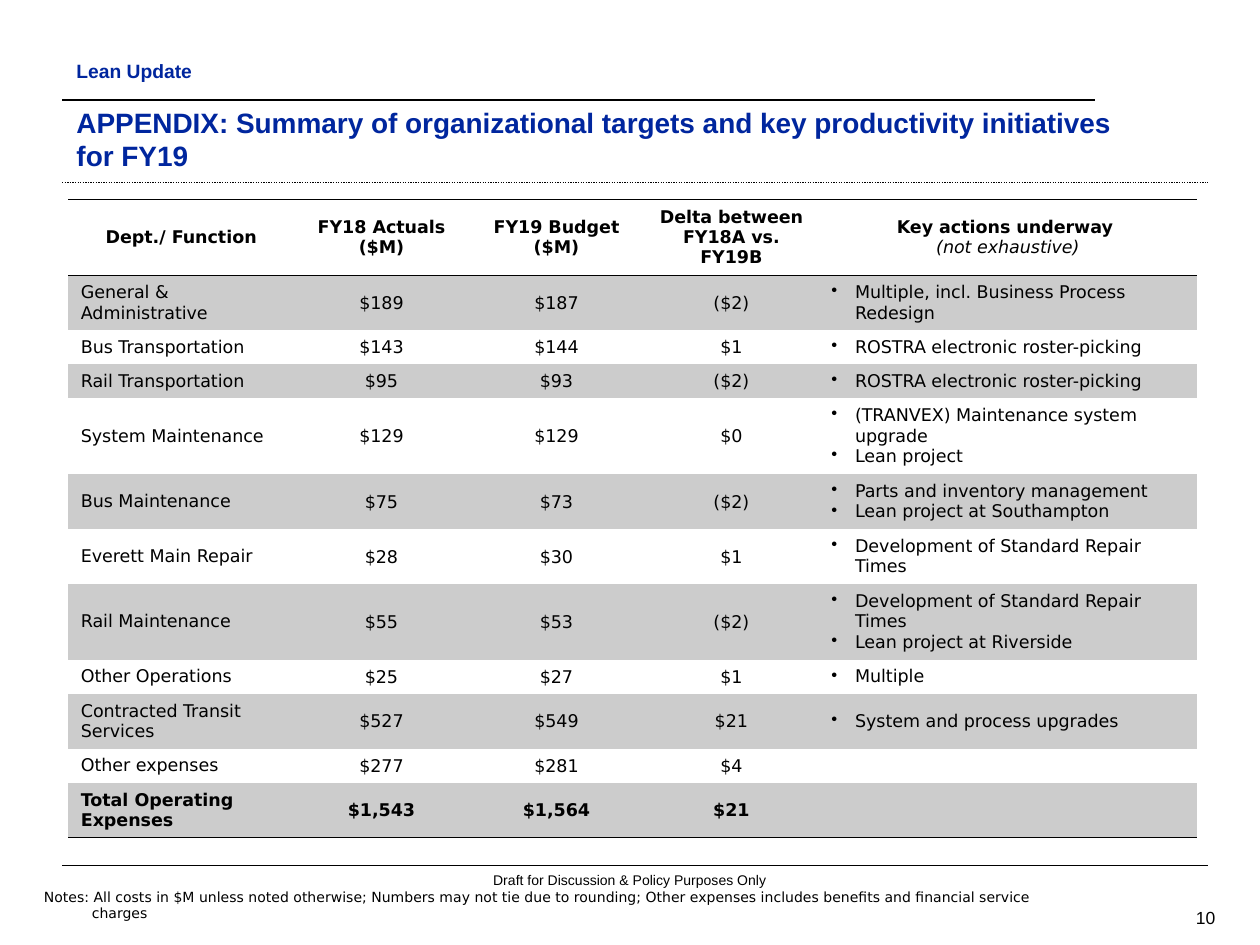
"""Builds the appendix slide with organizational targets and productivity initiatives."""
from lxml import etree
from pptx import Presentation
from pptx import util as u
from pptx.dml.color import RGBColor
from pptx.enum import dml, shapes, text
from pptx.oxml.ns import qn

SANS, TABLE_FONT = "Arial", "DejaVu Sans"
BLACK, NAVY, GREY = "000000", "00269E", "CCCCCC"
LEFT, CENTER, RIGHT = text.PP_ALIGN.LEFT, text.PP_ALIGN.CENTER, text.PP_ALIGN.RIGHT
TOP, MIDDLE, BOTTOM = text.MSO_ANCHOR.TOP, text.MSO_ANCHOR.MIDDLE, text.MSO_ANCHOR.BOTTOM
NO_GRID_STYLE = "{2D5ABB26-0587-4C30-8999-92F81FD0307C}"

TITLE = "APPENDIX: Summary of organizational targets and key productivity initiatives for FY19"
SECTION = "Lean Update"
FOOTER = "Draft for Discussion & Policy Purposes Only"
PAGE_NUMBER = "10"
NOTES = ("Notes: All costs in $M unless noted otherwise; Numbers may not tie due to rounding; "
         "Other expenses includes benefits and financial service charges")

HEADERS = ["Dept./ Function", "FY18 Actuals ($M)", "FY19 Budget ($M)",
           "Delta between FY18A vs. FY19B", "Key actions underway "]
HEADER_REMARK = "(not exhaustive)"
DEPARTMENTS = [
    ("General & Administrative", "$189", "$187", "($2)",
     ["Multiple, incl. Business Process Redesign"]),
    ("Bus Transportation", "$143", "$144", "$1", ["ROSTRA electronic roster-picking"]),
    ("Rail Transportation", "$95", "$93", "($2)", ["ROSTRA electronic roster-picking"]),
    ("System Maintenance", "$129", "$129", "$0",
     ["(TRANVEX) Maintenance system upgrade", "Lean project"]),
    ("Bus Maintenance", "$75", "$73", "($2)",
     ["Parts and inventory management", "Lean project at Southampton"]),
    ("Everett Main Repair", "$28", "$30", "$1", ["Development of Standard Repair Times"]),
    ("Rail Maintenance", "$55", "$53", "($2)",
     ["Development of Standard Repair Times", "Lean project at Riverside"]),
    ("Other Operations", "$25", "$27", "$1", ["Multiple"]),
    ("Contracted Transit Services", "$527", "$549", "$21", ["System and process upgrades"]),
    ("Other expenses", "$277", "$281", "$4", []),
    ("Total Operating Expenses", "$1,543", "$1,564", "$21", []),
]
ROW_LINES = [3, 2, 1, 1, 3, 2, 2, 3, 1, 2, 1, 2]
COLUMN_WIDTHS = [129, 100, 100, 100, 216]
RULES = [(57, 626, 1, None), (104.5, 690.5, 0.75, dml.MSO_LINE.ROUND_DOT),
         (494.6, 690.5, 0.75, None)]
RULE_LEFT = 35.5


def color(value):
    return RGBColor.from_string(value)


def add_run(paragraph, words, size, font, tint=BLACK, bold=False, italic=False):
    run = paragraph.add_run()
    run.text = words
    run.font.size = u.Pt(size)
    run.font.name = font
    run.font.bold = bold
    run.font.italic = italic
    run.font.color.rgb = color(tint)


def set_indent(paragraph, indent):
    properties = paragraph._p.get_or_add_pPr()
    properties.set("marL", str(u.Pt(indent)))
    properties.set("indent", str(-u.Pt(indent)))
    return properties


def fill_text(shape, words, size, font, tint=BLACK, bold=False,
              align=LEFT, anchor=TOP, indent=0):
    frame = shape.text_frame
    frame.word_wrap = True
    frame.auto_size = text.MSO_AUTO_SIZE.NONE
    frame.vertical_anchor = anchor
    paragraph = frame.paragraphs[0]
    paragraph.alignment = align
    if indent:
        set_indent(paragraph, indent)
    add_run(paragraph, words, size, font, tint, bold)


def add_label(slide, box, *content, **style):
    fill_text(slide.shapes.add_textbox(*map(u.Pt, box)), *content, **style)


def add_rule(slide, top, right, width, dash):
    line = slide.shapes.add_connector(
        shapes.MSO_CONNECTOR.STRAIGHT, u.Pt(RULE_LEFT), u.Pt(top), u.Pt(right), u.Pt(top))
    line.line.color.rgb = color(BLACK)
    line.line.width = u.Pt(width)
    if dash:
        line.line.dash_style = dash
    etree.SubElement(line._element.spPr, qn("a:effectLst"))


def add_borders(cell, *sides):
    properties = cell._tc.get_or_add_tcPr()
    for position, side in enumerate(sides):
        border = etree.Element(qn(f"a:{side}"), w=str(u.Pt(1)))
        fill = etree.SubElement(border, qn("a:solidFill"))
        etree.SubElement(fill, qn("a:srgbClr"), val=BLACK)
        properties.insert(position, border)


def write_cell(cell, lines, align=LEFT, bold=False, bullets=False):
    frame = cell.text_frame
    cell.vertical_anchor = MIDDLE
    for position, words in enumerate(lines):
        paragraph = frame.add_paragraph() if position else frame.paragraphs[0]
        paragraph.alignment = align
        if bullets:
            etree.SubElement(set_indent(paragraph, 13.5), qn("a:buChar"), char="•")
        remark = words == HEADER_REMARK
        add_run(paragraph, words, 10, TABLE_FONT, bold=bold and not remark, italic=remark)
    if not lines:
        etree.SubElement(frame.paragraphs[0]._p, qn("a:endParaRPr"), sz="1000")


def add_targets_table(slide):
    heights = [7.4 + 12 * lines for lines in ROW_LINES]
    frame = slide.shapes.add_table(
        len(heights), len(COLUMN_WIDTHS), u.Pt(39), u.Pt(114),
        u.Pt(sum(COLUMN_WIDTHS)), u.Pt(sum(heights)))
    next(frame._element.iter(qn("a:tableStyleId"))).text = NO_GRID_STYLE
    table = frame.table
    table.first_row = table.horz_banding = False
    for column, width in zip(table.columns, COLUMN_WIDTHS):
        column.width = u.Pt(width)
    for row, height in zip(table.rows, heights):
        row.height = u.Pt(height)

    for column, words in enumerate(HEADERS):
        cell = table.cell(0, column)
        last = column == len(HEADERS) - 1
        write_cell(cell, [words, HEADER_REMARK] if last else [words], CENTER, bold=True)
        cell.fill.background()
        add_borders(cell, "lnT", "lnB")

    for row, (department, *amounts, actions) in enumerate(DEPARTMENTS, 1):
        total = row == len(DEPARTMENTS)
        cells = table.rows[row].cells
        write_cell(cells[0], [department], bold=total)
        for cell, amount in zip(cells[1:4] if isinstance(cells, list) else list(cells)[1:4],
                                amounts):
            write_cell(cell, [amount], CENTER, bold=total)
            cell.margin_left = cell.margin_right = cell.margin_top = u.Pt(0.7)
            cell.margin_bottom = 0
        write_cell(cells[4], actions, bullets=True)
        for cell in cells:
            if row % 2:
                cell.fill.solid()
                cell.fill.fore_color.rgb = color(GREY)
            else:
                cell.fill.background()
            if total:
                add_borders(cell, "lnB")


def main():
    presentation = Presentation()
    presentation.slide_width, presentation.slide_height = u.Pt(720), u.Pt(540)
    slide = presentation.slides.add_slide(presentation.slide_layouts[5])
    for rule in RULES:
        add_rule(slide, *rule)
    title = slide.shapes.title
    title.left, title.top, title.width, title.height = map(u.Pt, (36.5, 65.5, 610.5, 36.7))
    fill_text(title, TITLE, 16, SANS, NAVY, bold=True, anchor=BOTTOM)
    add_label(slide, (36.5, 30.2, 575, 18), SECTION, 11, SANS, NAVY, bold=True, indent=18)
    add_targets_table(slide)
    add_label(slide, (257, 494.6, 206, 17), FOOTER, 8, SANS, align=CENTER)
    add_label(slide, (18, 504, 612, 26.6), NOTES, 8, TABLE_FONT, indent=27.4)
    add_label(slide, (641.5, 515.5, 60, 18), PAGE_NUMBER, 10, SANS, align=RIGHT, anchor=MIDDLE)
    presentation.save("out.pptx")


if __name__ == "__main__":
    main()
